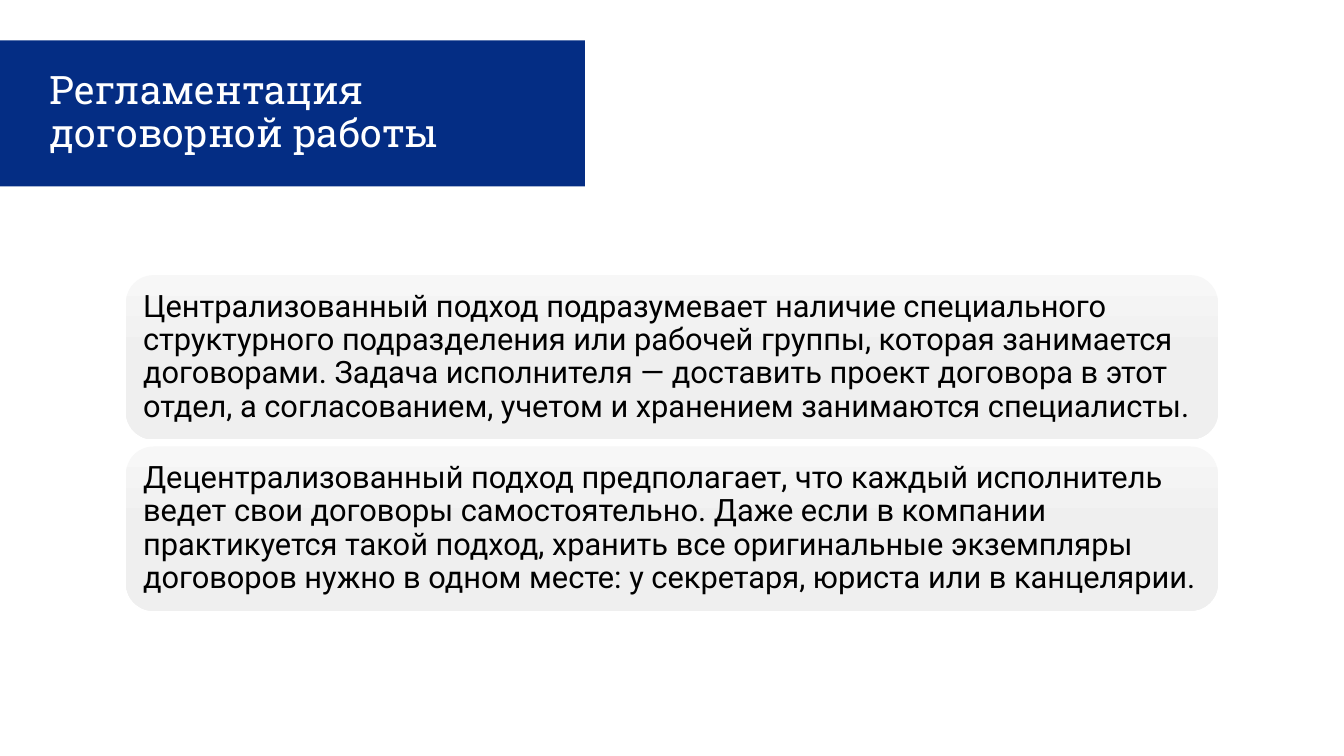
from copy import deepcopy
from dataclasses import dataclass

from pptx import Presentation
from pptx.dml.color import RGBColor
from pptx.enum.shapes import MSO_SHAPE
from pptx.enum.text import MSO_ANCHOR, MSO_AUTO_SIZE, PP_ALIGN
from pptx.util import Inches, Pt


@dataclass(frozen=True)
class Theme:
    banner: str = "042D84"
    banner_text: str = "FFFFFF"
    card_text: str = "000000"
    card_stops: tuple = ((0, "F7F7F7"), (0.5, "EFEFEF"), (1, "EDEDED"))
    title_font: str = "Roboto Slab"
    body_font: str = "Roboto"
    title_size: int = 28
    body_size: int = 22
    line_spacing: float = 0.9


THEME = Theme()

TITLE = "Регламентация договорной работы"
APPROACHES = [
    "Централизованный подход подразумевает наличие специального структурного "
    "подразделения или рабочей группы, которая занимается договорами. Задача "
    "исполнителя — доставить проект договора в этот отдел, а согласованием, "
    "учетом и хранением занимаются специалисты.",
    "Децентрализованный подход предполагает, что каждый исполнитель ведет свои "
    "договоры самостоятельно. Даже если в компании практикуется такой подход, "
    "хранить все оригинальные экземпляры договоров нужно в одном месте: "
    "у секретаря, юриста или в канцелярии.",
]


def set_attributes(target, values):
    for name, value in values.items():
        setattr(target, name, value)


def write_text(shape, text, font, size, color, side_inset, edge_inset):
    frame = shape.text_frame
    frame.text = text
    set_attributes(frame, {
        "word_wrap": True,
        "auto_size": MSO_AUTO_SIZE.NONE,
        "vertical_anchor": MSO_ANCHOR.MIDDLE,
        "margin_left": Inches(side_inset),
        "margin_right": Inches(side_inset),
        "margin_top": Inches(edge_inset),
        "margin_bottom": Inches(edge_inset),
    })
    paragraph = frame.paragraphs[0]
    set_attributes(paragraph, {
        "alignment": PP_ALIGN.LEFT,
        "line_spacing": THEME.line_spacing,
        "space_before": Pt(0),
        "space_after": Pt(0),
    })
    run_font = paragraph.runs[0].font
    set_attributes(run_font, {"name": font, "size": Pt(size)})
    run_font.color.rgb = RGBColor.from_string(color)


def fill_downward_gradient(shape, stops):
    fill = shape.fill
    fill.gradient()
    fill.gradient_angle = 270
    # A new gradient has two stops, so copy one for each further stop
    stop_list = fill._fill._gradFill.gsLst
    while len(stop_list) < len(stops):
        stop_list.append(deepcopy(stop_list[-1]))
    for stop, (position, color) in zip(fill.gradient_stops, stops):
        stop.position = position
        stop.color.rgb = RGBColor.from_string(color)


def add_title_banner(slide, left, top, width, height):
    title = slide.shapes.title
    set_attributes(title, {
        "left": Inches(left), "top": Inches(top),
        "width": Inches(width), "height": Inches(height),
    })
    title.fill.solid()
    title.fill.fore_color.rgb = RGBColor.from_string(THEME.banner)
    write_text(title, TITLE, THEME.title_font, THEME.title_size,
               THEME.banner_text, side_inset=0.49, edge_inset=0.05)


def add_approach_cards(slide, left, top, width, height, gap=0.07):
    card_height = (height - gap * (len(APPROACHES) - 1)) / len(APPROACHES)
    for index, text in enumerate(APPROACHES):
        card_top = top + index * (card_height + gap)
        card = slide.shapes.add_shape(
            MSO_SHAPE.ROUNDED_RECTANGLE, Inches(left), Inches(card_top),
            Inches(width), Inches(card_height))
        card.shadow.inherit = False
        card.line.fill.background()
        fill_downward_gradient(card, THEME.card_stops)
        write_text(card, text, THEME.body_font, THEME.body_size,
                   THEME.card_text, side_inset=0.09, edge_inset=0.09)


def main():
    presentation = Presentation()
    presentation.slide_width = Inches(13.33)
    presentation.slide_height = Inches(7.5)
    slide = presentation.slides.add_slide(presentation.slide_layouts[5])

    # Title on a blue banner
    add_title_banner(slide, 0, 0.4, 5.8, 1.45)
    # One card per approach, stacked
    add_approach_cards(slide, 1.25, 2.73, 10.83, 3.33)

    presentation.save("out.pptx")


if __name__ == "__main__":
    main()
